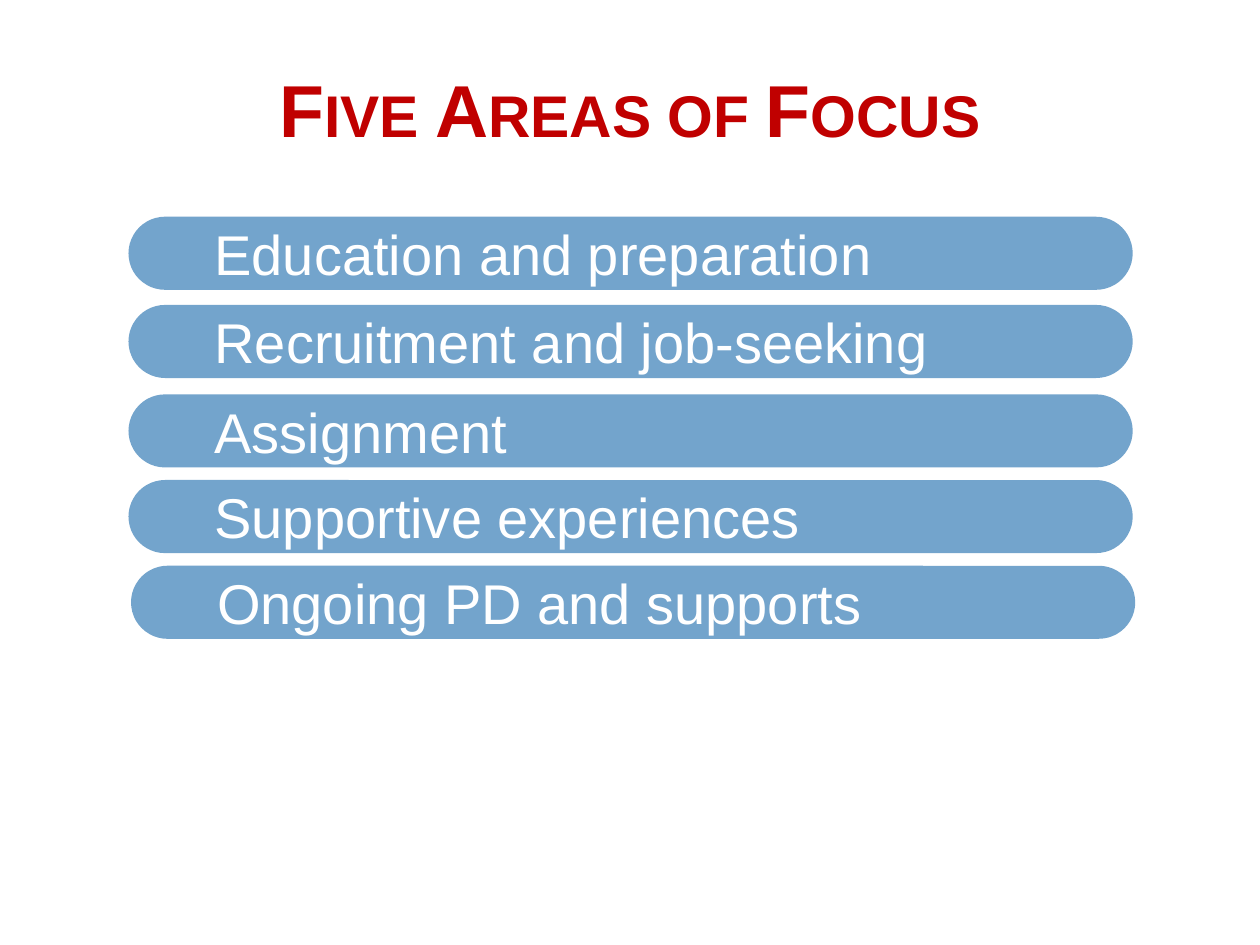
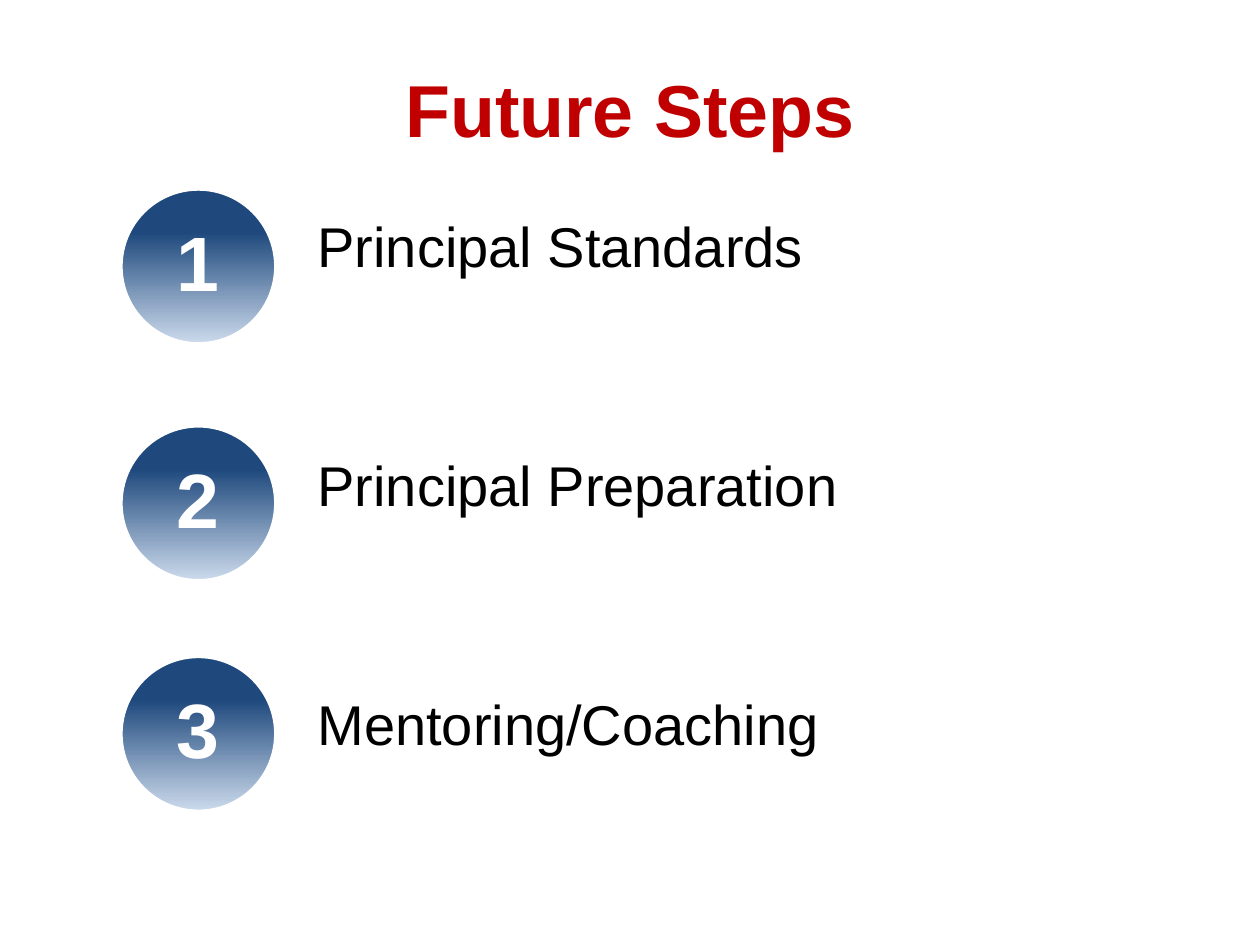
from copy import deepcopy
from dataclasses import dataclass

from pptx import Presentation
from pptx.dml.color import RGBColor as Color
from pptx.enum.shapes import MSO_SHAPE as Shape
from pptx.enum.text import MSO_ANCHOR as Anchor, MSO_AUTO_SIZE as AutoSize, PP_ALIGN as Align
from pptx.util import Emu, Pt

PX = 9144


@dataclass(frozen=True)
class Theme:
    font: str = "Arial"
    title: str = "C00000"
    pill: str = "73A4CC"
    light: str = "FFFFFF"
    dark: str = "000000"
    badge: tuple = ((0.08, "1F497D"), (0.28, "1F497D"), (0.99, "CAD9EB"))
    title_size: int = 42
    text_size: int = 32
    number_size: int = 44


THEME = Theme()


def px(value):
    return Emu(value * PX)


def place(box):
    return [px(value) for value in box]


def write(shape, lines, size=THEME.text_size, color=THEME.dark, bold=False, small_caps=False,
          align=Align.LEFT, anchor=Anchor.TOP, inset=0, indent=0, gap=0, line_spacing=None,
          auto_size=AutoSize.NONE):
    frame = shape.text_frame
    frame.word_wrap = True
    frame.auto_size = auto_size
    frame.vertical_anchor = anchor
    if inset is not None:
        frame.margin_left = frame.margin_right = px(inset)
        frame.margin_top = frame.margin_bottom = px(inset)
    for index, line in enumerate(lines):
        para = frame.add_paragraph() if index else frame.paragraphs[0]
        para.alignment = align
        para.space_before = Pt(gap if index else 0)
        if line_spacing:
            para.line_spacing = line_spacing
        if indent:
            properties = para._p.get_or_add_pPr()
            properties.set("marL", str(px(indent)))
            properties.set("indent", "0")
        span = para.add_run()
        span.text = line
        span.font.name = THEME.font
        span.font.size = Pt(size)
        span.font.bold = bold
        span.font.color.rgb = Color.from_string(color)
        if small_caps:
            span.font._element.set("cap", "small")


def add_page(deck, title, small_caps=False):
    page = deck.slides.add_slide(deck.slide_layouts[5])
    heading = page.shapes.title
    heading.left, heading.top, heading.width, heading.height = place((50, 50, 900, 71))
    write(heading, [title], size=THEME.title_size, color=THEME.title, bold=True,
          small_caps=small_caps, align=Align.CENTER, anchor=Anchor.MIDDLE,
          auto_size=AutoSize.SHAPE_TO_FIT_TEXT)
    return page


def add_pill(page, box, text):
    pill = page.shapes.add_shape(Shape.ROUNDED_RECTANGLE, *place(box))
    pill.adjustments[0] = 0.5
    pill.shadow.inherit = False
    pill.fill.solid()
    pill.fill.fore_color.rgb = Color.from_string(THEME.pill)
    pill.line.fill.background()
    write(pill, [text], color=THEME.light, anchor=Anchor.MIDDLE, inset=None, indent=50)


def fill_gradient(shape, stops):
    shape.fill.gradient()
    shape.fill.gradient_angle = 270
    stop_list = shape.fill._fill._gradFill.gsLst
    stop_list.append(deepcopy(stop_list[-1]))
    for stop, (position, color) in zip(shape.fill.gradient_stops, stops):
        stop.position = position
        stop.color.rgb = Color.from_string(color)


def add_badge(page, box, number):
    left, top, width, height = box
    group = page.shapes.add_group_shape()
    circle = group.shapes.add_shape(Shape.OVAL, *place(box))
    circle.shadow.inherit = False
    fill_gradient(circle, THEME.badge)
    circle.line.color.rgb = Color.from_string(THEME.light)
    circle.line.width = Pt(2)
    margin = 18
    label = group.shapes.add_textbox(
        *place((left + margin, top + margin, width - 2 * margin, height - 2 * margin)))
    write(label, [str(number)], size=THEME.number_size, color=THEME.light, bold=True,
          align=Align.CENTER, anchor=Anchor.MIDDLE, inset=8, line_spacing=0.9)


def add_focus_areas(page, box, areas):
    left, top, width, height = box
    for text, shift, drop in areas:
        add_pill(page, (left + shift, top + drop, width, height), text)


def add_steps(page, box, steps):
    left, top, width, height = box
    diameter = 123
    for number, (text, drop) in enumerate(steps, 1):
        add_badge(page, (left, top + drop, diameter, diameter), number)
    text_left, text_drop = 156, 18
    body = page.shapes.add_textbox(
        *place((left + text_left, top + text_drop, width - text_left, height - text_drop)))
    write(body, [text for text, drop in steps], gap=98)


def main():
    deck = Presentation()
    deck.slide_width, deck.slide_height = px(1000), px(750)

    focus = add_page(deck, "Five Areas of Focus", small_caps=True)
    add_focus_areas(focus, (102, 172, 797, 58), [
        ("Education and preparation", 0, 0),
        ("Recruitment and job-seeking", 0, 70),
        ("Assignment", 0, 141),
        ("Supportive experiences", 0, 209),
        ("Ongoing PD and supports", 2, 277),
    ])

    future = add_page(deck, "Future Steps")
    add_steps(future, (96, 150, 854, 480), [
        ("Principal Standards", 0),
        ("Principal Preparation", 188),
        ("Mentoring/Coaching", 371),
    ])

    deck.save("out.pptx")


if __name__ == "__main__":
    main()
